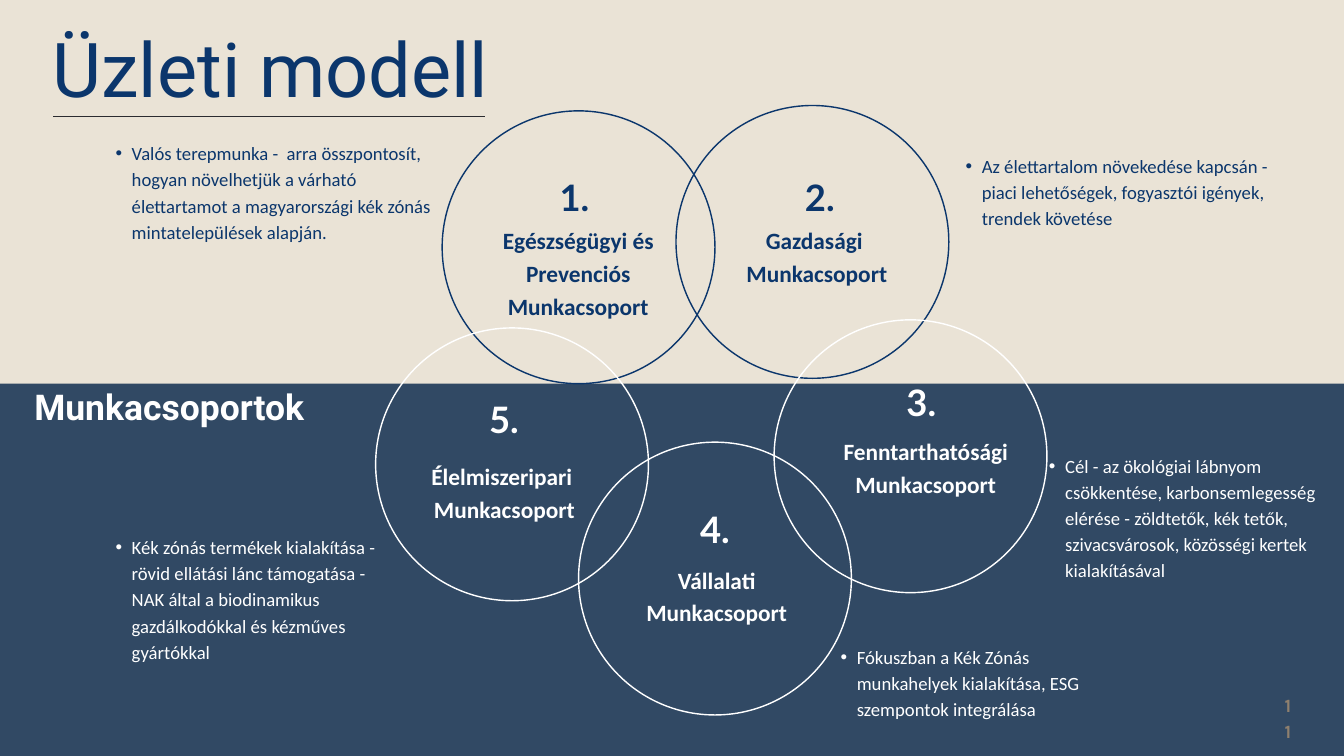
from lxml.etree import SubElement
from pptx import Presentation
from pptx.dml.color import RGBColor
from pptx.enum.shapes import MSO_CONNECTOR, MSO_SHAPE
from pptx.enum.text import MSO_ANCHOR, MSO_AUTO_SIZE, PP_ALIGN
from pptx.oxml.ns import qn
from pptx.util import Inches, Pt

CREAM = RGBColor(0xEA, 0xE3, 0xD6)
SLATE = RGBColor(0x31, 0x49, 0x64)
NAVY = RGBColor(0x0B, 0x36, 0x6C)
WHITE = RGBColor(0xFF, 0xFF, 0xFF)
BLACK = RGBColor(0x2B, 0x2C, 0x30)
TAUPE = RGBColor(0x8F, 0x80, 0x6E)

RING = 4.06

GROUPS = [
    ("1.", "Egészségügyi és Prevenciós Munkacsoport", NAVY,
     (6.58, 1.65), (7.51, 2.65), (7.04, 3.3, 3.13, 1.46)),
    ("2.", "Gazdasági \nMunkacsoport", NAVY,
     (10.06, 1.57), (11.16, 2.65), (10.59, 3.3, 3.13, 0.98)),
    ("3.", "Fenntarthatósági Munkacsoport", WHITE,
     (11.52, 4.76), (12.67, 5.69), (12.22, 6.44, 3.11, 0.98)),
    ("4.", "Vállalati\nMunkacsoport", WHITE,
     (8.61, 6.58), (9.6, 7.58), (9.11, 8.35, 3.11, 0.98)),
    ("5.", "Élelmiszeripari \nMunkacsoport", WHITE,
     (5.59, 4.88), (6.46, 5.95), (5.95, 6.81, 3.11, 0.98)),
]

NOTES = [
    ("Valós terepmunka -  arra összpontosít, hogyan növelhetjük a várható "
     "élettartamot a magyarországi kék zónás mintatelepülések alapján.",
     NAVY, (1.49, 2.06, 5.09, 1.94)),
    ("Az élettartalom növekedése kapcsán - piaci lehetőségek, fogyasztói "
     "igények, trendek követése",
     NAVY, (14.14, 2.25, 5.09, 1.56)),
    ("Cél - az ökológiai lábnyom csökkentése, karbonsemlegesség elérése - "
     "zöldtetők, kék tetők, szivacsvárosok, közösségi kertek kialakításával",
     WHITE, (15.38, 6.71, 4.35, 2.33)),
    ("Fókuszban a Kék Zónás munkahelyek kialakítása, ESG szempontok "
     "integrálása",
     WHITE, (12.28, 9.55, 4.35, 1.17)),
    ("Kék zónás termékek kialakítása - rövid ellátási lánc támogatása - NAK "
     "által a biodinamikus gazdálkodókkal és kézműves gyártókkal",
     WHITE, (1.49, 7.92, 4.35, 1.94)),
]


def add_mark(para):
    props = para._p.get_or_add_pPr()
    props.set("marL", str(Inches(0.47)))
    props.set("indent", str(Inches(-0.24)))
    SubElement(props, qn("a:buFont"), typeface="Arial")
    SubElement(props, qn("a:buChar"), char="•")


def write(shape, text, *, size, lead, color, font="Calibri", bold=False,
          align=PP_ALIGN.LEFT, mark=False):
    frame = shape.text_frame
    frame.word_wrap = True
    frame.auto_size = MSO_AUTO_SIZE.SHAPE_TO_FIT_TEXT
    frame.vertical_anchor = MSO_ANCHOR.TOP
    frame.margin_left = frame.margin_right = 0
    frame.margin_top = frame.margin_bottom = 0
    frame.text = text
    for para in frame.paragraphs:
        para.alignment = align
        para.line_spacing = Pt(lead)
        if mark:
            para.level = 1
            add_mark(para)
        for run in para.runs:
            run.font.name = font
            run.font.size = Pt(size)
            run.font.bold = bold
            run.font.color.rgb = color


def add_text(slide, text, box, **style):
    shape = slide.shapes.add_textbox(*map(Inches, box))
    write(shape, text, **style)


def add_title(slide, text, box):
    title = slide.shapes.title
    title.left, title.top, title.width, title.height = map(Inches, box)
    write(title, text, size=81, lead=78.6, color=NAVY, font="Roboto")


def add_band(slide, box):
    band = slide.shapes.add_shape(MSO_SHAPE.RECTANGLE, *map(Inches, box))
    band.shadow.inherit = False
    band.fill.solid()
    band.fill.fore_color.rgb = SLATE
    band.line.fill.background()


def add_ring(slide, spot, color):
    box = (*spot, RING, RING)
    ring = slide.shapes.add_shape(MSO_SHAPE.OVAL, *map(Inches, box))
    ring.shadow.inherit = False
    ring.fill.background()
    ring.line.color.rgb = color
    ring.line.width = Pt(1.5)


def add_rule(slide, ends):
    rule = slide.shapes.add_connector(MSO_CONNECTOR.STRAIGHT,
                                      *map(Inches, ends))
    rule.line.color.rgb = BLACK
    rule.line.width = Pt(0.75)
    SubElement(rule._element.spPr, qn("a:effectLst"))


def add_group(slide, num, name, color, ring, spot, box):
    add_ring(slide, ring, color)
    add_text(slide, num, (*spot, 2.08, 0.74), size=39, lead=44.1,
             color=color, font="Lato", bold=True, align=PP_ALIGN.CENTER)
    add_text(slide, name, box, size=25, lead=35, color=color, bold=True,
             align=PP_ALIGN.CENTER)


def main():
    deck = Presentation()
    deck.slide_width = Inches(20)
    deck.slide_height = Inches(11.25)
    slide = deck.slides.add_slide(deck.slide_layouts[5])
    slide.background.fill.solid()
    slide.background.fill.fore_color.rgb = CREAM

    add_band(slide, (0, 5.71, 20, 5.54))
    add_title(slide, "Üzleti modell", (0.78, 0.59, 9.08, 1.21))
    add_rule(slide, (0.79, 1.73, 7.22, 1.73))
    add_text(slide, "Munkacsoportok", (0.51, 5.63, 4.35, 0.73), size=38,
             lead=53.2, color=WHITE, font="Roboto", bold=True)
    for group in GROUPS:
        add_group(slide, *group)
    for text, color, box in NOTES:
        add_text(slide, text, box, size=20, lead=28, color=color, mark=True)
    add_text(slide, "11", (19.08, 10.27, 0.17, 0.23), size=20, lead=28,
             color=TAUPE, font="Karla", bold=True, align=PP_ALIGN.CENTER)
    deck.save("out.pptx")


if __name__ == "__main__":
    main()
